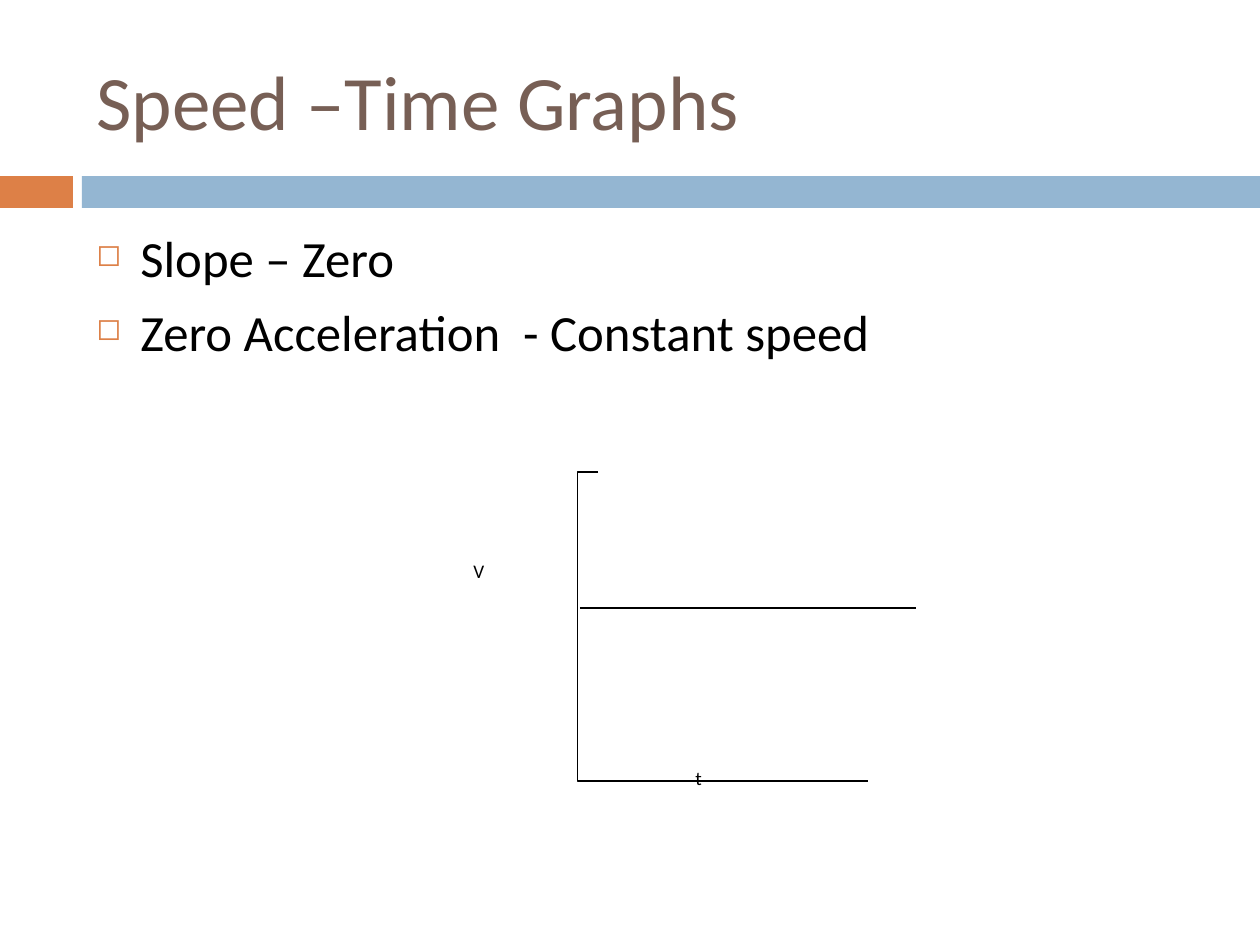
from lxml import etree
from pptx import Presentation
from pptx.dml.color import RGBColor
from pptx.enum.shapes import MSO_CONNECTOR, MSO_SHAPE
from pptx.enum.text import MSO_ANCHOR, PP_ALIGN
from pptx.oxml.ns import qn
from pptx.util import Emu, Pt

PX = 914400 // 126
FONT = "Calibri"
RECT = MSO_SHAPE.RECTANGLE
STRAIGHT, ELBOW = MSO_CONNECTOR.STRAIGHT, MSO_CONNECTOR.ELBOW
TOP, MIDDLE = MSO_ANCHOR.TOP, MSO_ANCHOR.MIDDLE
LEFT = PP_ALIGN.LEFT

COLORS = {"orange": "DD8047", "blue": "94B6D2", "brown": "775F55",
          "black": "000000", "white": "FFFFFF"}

TITLE = "Speed –Time Graphs"
BULLETS = ["Slope – Zero", "Zero Acceleration  - Constant speed"]
BANDS = [("orange", (0, 176, 73, 32)), ("blue", (82, 176, 1178, 32))]
TIME_LABEL = ("t", (683, 760, 93, 140))
SPEED_LABEL = ("V", (461, 553, 98, 113))
AXES = (598, 472, 868, 781)
AXES_BEND = -7700  # thousandths of a percent of the width: the y axis lies left of both ends
SPEED_LINE = (580, 608, 916, 608)


def px(*values):
    return [Emu(v * PX) for v in values]


def rgb(name):
    return RGBColor.from_string(COLORS[name])


def add_bullet(p):
    pPr = p._p.get_or_add_pPr()
    pPr.set("marL", str(44 * PX))
    pPr.set("indent", str(-44 * PX))
    color = etree.SubElement(pPr, qn("a:buClr"))
    etree.SubElement(color, qn("a:srgbClr"), val=COLORS["orange"])
    etree.SubElement(pPr, qn("a:buSzPct"), val="60000")
    etree.SubElement(pPr, qn("a:buChar"), char="◻")


def write(shape, lines, size, color="black", anchor=TOP, before=0, bullet=False):
    tf = shape.text_frame
    tf.word_wrap = True
    tf.vertical_anchor = anchor
    for i, line in enumerate(lines):
        p = tf.paragraphs[0] if i == 0 else tf.add_paragraph()
        p.alignment = LEFT
        p.space_before = Pt(before)
        if bullet:
            add_bullet(p)
        r = p.add_run()
        r.text = line
        r.font.name, r.font.size = FONT, Pt(size)
        r.font.color.rgb = rgb(color)


def add_box(s, box, fill):
    sp = s.shapes.add_shape(RECT, *px(*box))
    sp.shadow.inherit = False
    sp.fill.solid()
    sp.fill.fore_color.rgb = rgb(fill)
    sp.line.fill.background()
    return sp


def add_label(s, text, box):
    sp = add_box(s, box, "white")
    sp.line.color.rgb = rgb("white")
    sp.line.width = Pt(0.75)
    write(sp, [text], 11)


def add_line(s, kind, ends):
    line = s.shapes.add_connector(kind, *px(*ends))
    line.line.color.rgb = rgb("black")
    line.line.width = Pt(0.75)
    etree.SubElement(line._element.spPr, qn("a:effectLst"))
    return line


def main():
    prs = Presentation()
    prs.slide_width, prs.slide_height = px(1260, 945)
    s = prs.slides.add_slide(prs.slide_layouts[6])

    for fill, box in BANDS:
        add_box(s, box, fill)
    write(s.shapes.add_textbox(*px(84, 32, 1124, 136)), [TITLE], 44,
          color="brown", anchor=MIDDLE)
    write(s.shapes.add_textbox(*px(84, 221, 1124, 620)), BULLETS, 29,
          before=7, bullet=True)

    add_label(s, *TIME_LABEL)
    axes = add_line(s, ELBOW, AXES)
    guides = axes._element.spPr.find(qn("a:prstGeom")).get_or_add_avLst()
    etree.SubElement(guides, qn("a:gd"), name="adj1", fmla=f"val {AXES_BEND}")
    add_label(s, *SPEED_LABEL)
    add_line(s, STRAIGHT, SPEED_LINE)

    prs.save("out.pptx")


if __name__ == "__main__":
    main()
